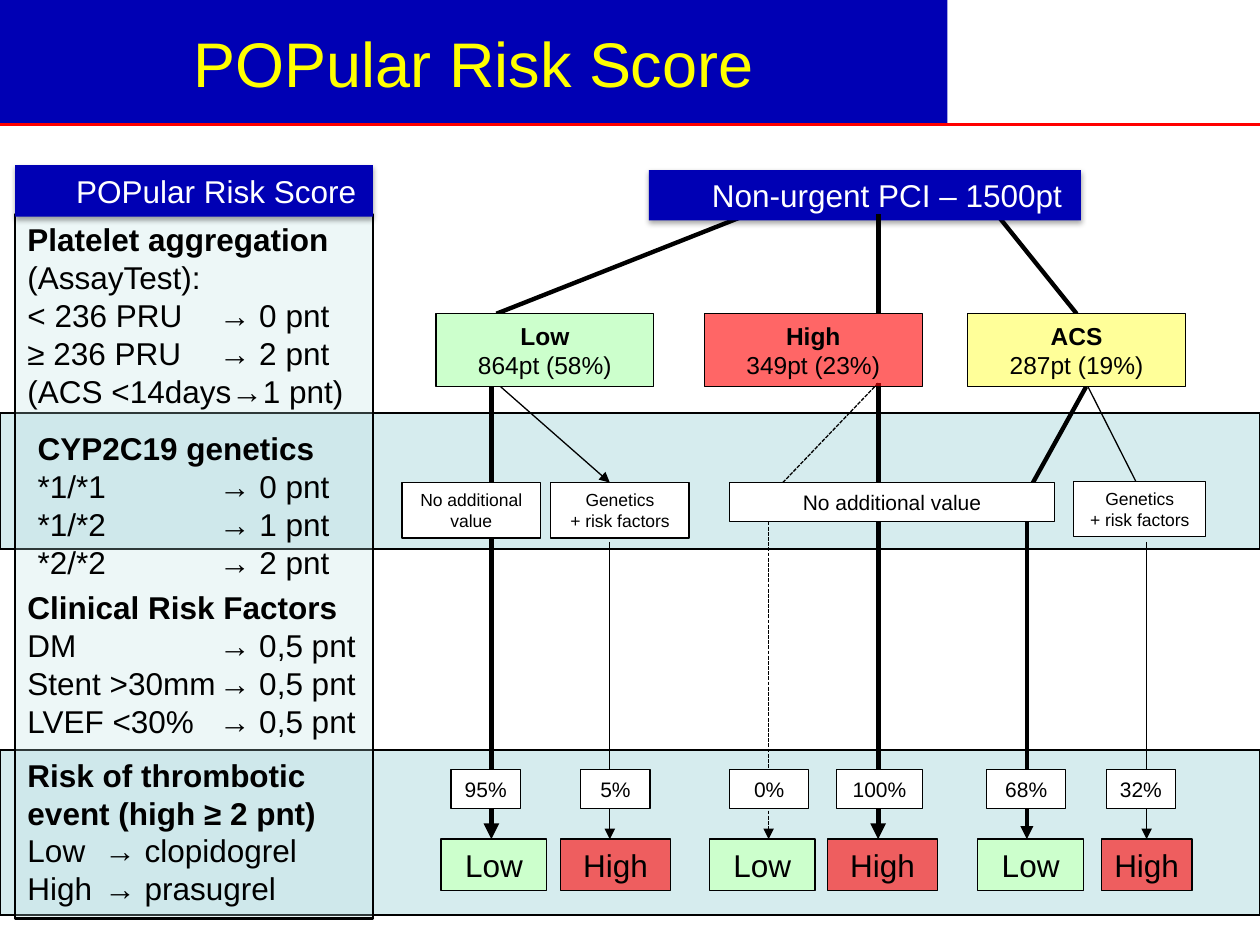
from dataclasses import dataclass

from lxml import etree
from pptx import Presentation
from pptx.dml.color import RGBColor
from pptx.enum.dml import MSO_LINE
from pptx.enum.shapes import MSO_CONNECTOR, MSO_SHAPE
from pptx.enum.text import MSO_ANCHOR, PP_ALIGN
from pptx.oxml.ns import qn
from pptx.util import Inches, Pt

RECTANGLE = MSO_SHAPE.RECTANGLE
STRAIGHT = MSO_CONNECTOR.STRAIGHT
DASH = MSO_LINE.SQUARE_DOT
LEFT, CENTER = PP_ALIGN.LEFT, PP_ALIGN.CENTER
TOP, MIDDLE = MSO_ANCHOR.TOP, MSO_ANCHOR.MIDDLE

BLUE = RGBColor(0x00, 0x00, 0xB4)
YELLOW = RGBColor(0xFF, 0xFF, 0x00)
RED = RGBColor(0xFF, 0x00, 0x00)
GREEN = RGBColor(0xCC, 0xFF, 0xCC)
PALE_YELLOW = RGBColor(0xFF, 0xFF, 0x99)
TEAL = RGBColor(0xBB, 0xE0, 0xE3)
WHITE = RGBColor(0xFF, 0xFF, 0xFF)
BLACK = RGBColor(0x00, 0x00, 0x00)

SLIDE_WIDTH, SLIDE_HEIGHT = Inches(10), Inches(7.5)
COLUMN, ROW = SLIDE_WIDTH / 100, SLIDE_HEIGHT / 75

GROUP_HEIGHT, SPLIT_ROW, TEST_ROW, TEST_HEIGHT = 5.8, 5.5, 13.4, 4.4
PERCENT_ROW, PERCENT_HEIGHT, OUTCOME_ROW, OUTCOME_HEIGHT = 36.2, 3.1, 41.7, 4.1


@dataclass
class Branch:
    left: float
    name: str
    count: str
    fill: RGBColor
    opacity: int
    lines: list
    tests: list
    percents: list
    outcomes: list


BRANCHES = [
    Branch(34.6, "Low", "864pt (58%)", GREEN, 100,
           [(4.4, SPLIT_ROW, 4.4, OUTCOME_ROW, 3), (4.8, SPLIT_ROW, 13.8, TEST_ROW, 0.75),
            (13.8, 18.1, 13.8, OUTCOME_ROW, 0.75)],
           [(-2.7, 13.4, 11, "No additional\nvalue"), (9.1, 13.4, 11, "Genetics\n+ risk factors")],
           [(1.2, 5.5, "95%"), (11.5, 5.5, "5%")], [(0.4, 8.4), (9.9, 8.7)]),
    Branch(55.9, "High", "349pt (23%)", RED, 60,
           [(13.8, SPLIT_ROW, 4.7, 15, 0.75, DASH), (5.1, 16.5, 5.1, OUTCOME_ROW, 0.75, DASH),
            (13.8, SPLIT_ROW, 13.8, OUTCOME_ROW, 3)],
           [], [(2, 6.3, "0%"), (10.5, 6.8, "100%")], [(0.4, 8.4), (9.8, 8.7)]),
    Branch(76.8, "ACS", "287pt (19%)", PALE_YELLOW, 100,
           [(9.4, 5.8, 4.3, 15, 2.5), (4.7, 15.7, 4.7, OUTCOME_ROW, 2.5),
            (9.4, SPLIT_ROW, 14.2, 15, 0.75), (14.2, 18.1, 14.2, OUTCOME_ROW, 0.75)],
           [(8.4, 13.3, 10.5, "Genetics\n+ risk factors")],
           [(1.5, 6.3, "68%"), (11, 5.5, "32%")], [(0.8, 8.4), (10.6, 7.2)]),
]

SCORE_SECTIONS = [
    (0, 3.9, 15.2, 1, ["Platelet aggregation", "(AssayTest):", "< 236 PRU\t→ 0 pnt",
                       "≥ 236 PRU\t→ 2 pnt", "(ACS <14days→1 pnt)"]),
    (0.8, 20.5, 14.4, 1, ["CYP2C19 genetics", "*1/*1\t→ 0 pnt", "*1/*2\t→ 1 pnt", "*2/*2\t→ 2 pnt"]),
    (0, 33.1, 15.2, 1, ["Clinical Risk Factors", "DM\t→ 0,5 pnt", "Stent >30mm\t→ 0,5 pnt",
                        "LVEF <30%\t→ 0,5 pnt"]),
    (0, 46.4, 6.1, 2, ["Risk of thrombotic", "event (high ≥ 2 pnt)", "Low\t→ clopidogrel",
                       "High\t→ prasugrel"]),
]


def grid_box(left, top, width, height):
    return [round(n) for n in (left * COLUMN, top * ROW, width * COLUMN, height * ROW)]


def set_opacity(shape, percent):
    color = shape.fill._xPr.find(qn("a:solidFill"))[0]
    etree.SubElement(color, qn("a:alpha"), val=str(percent * 1000))


def write_text(shape, lines, size, color=BLACK, bold_lines=0, alignment=CENTER, anchor=MIDDLE, tab=None):
    frame = shape.text_frame
    frame.word_wrap = True
    frame.vertical_anchor = anchor
    frame.text = "\n".join(lines)
    for index, paragraph in enumerate(frame.paragraphs):
        paragraph.alignment = alignment
        if tab:
            stops = etree.SubElement(paragraph._p.get_or_add_pPr(), qn("a:tabLst"))
            etree.SubElement(stops, qn("a:tab"), pos=str(round(tab * COLUMN)), algn="l")
        font = paragraph.font
        font.name, font.size, font.bold = "Arial", Pt(size), index < bold_lines
        font.color.rgb = color


def add_box(slide, box, fill, opacity=100, line_width=0.75):
    shape = slide.shapes.add_shape(RECTANGLE, *grid_box(*box))
    shape.shadow.inherit = False
    shape.fill.solid()
    shape.fill.fore_color.rgb = fill
    if opacity < 100:
        set_opacity(shape, opacity)
    if line_width:
        shape.line.color.rgb = BLACK
        shape.line.width = Pt(line_width)
    else:
        shape.line.fill.background()
    return shape


def add_line(slide, x1, y1, x2, y2, width, dash=None, color=BLACK, arrow=False):
    start, end = grid_box(x1, y1, 0, 0)[:2], grid_box(x2, y2, 0, 0)[:2]
    connector = slide.shapes.add_connector(STRAIGHT, *start, *end)
    connector.line.color.rgb = color
    connector.line.width = Pt(width)
    if dash:
        connector.line.dash_style = dash
    if arrow:
        etree.SubElement(connector.line._get_or_add_ln(), qn("a:tailEnd"), type="triangle")
    etree.SubElement(connector._element.spPr, qn("a:effectLst"))
    return connector


def draw_header(slide, box, text):
    shape = add_box(slide, box, BLUE, line_width=0)
    write_text(shape, [text], 18, WHITE)
    shape.text_frame.margin_left = round(4.5 * COLUMN)
    effects = shape._element.spPr.find(qn("a:effectLst"))
    shadow = etree.SubElement(effects, qn("a:outerShdw"), blurRad=str(Pt(3.1)),
                              dist=str(Pt(1.8)), dir="5400000", rotWithShape="0")
    color = etree.SubElement(shadow, qn("a:srgbClr"), val=str(BLACK))
    etree.SubElement(color, qn("a:alpha"), val="35000")


def draw_title(slide, box):
    left, top, width, height = box
    title = add_box(slide, (left, top, width * 0.752, height), BLUE, line_width=0)
    write_text(title, ["POPular Risk Score"], 36, YELLOW)
    add_line(slide, left, top + height, left + width, top + height, 2, color=RED)


def draw_score_panel(slide, box):
    left, top, width, height = box
    add_box(slide, (left, top + 3.9, width, height - 3.9), TEAL, 25, 1.5)
    for indent, offset, tab, bold_lines, lines in SCORE_SECTIONS:
        section = slide.shapes.add_textbox(*grid_box(left + indent, top + offset, width + 0.9 - indent, 13))
        write_text(section, lines, 18, bold_lines=bold_lines, alignment=LEFT, anchor=TOP, tab=tab)
    draw_header(slide, (left, top, width, 4.1), "POPular Risk Score")


def draw_branch(slide, box, branch):
    left, top, width, height = box
    for x1, y1, x2, y2, *style in branch.lines:
        last_line = add_line(slide, left + x1, top + y1, left + x2, top + y2, *style, arrow=True)
    group = add_box(slide, (left, top, width, GROUP_HEIGHT), branch.fill, branch.opacity)
    write_text(group, [branch.name, branch.count], 14, bold_lines=1)
    for x, y, test_width, text in branch.tests:
        test = add_box(slide, (left + x, top + y, test_width, TEST_HEIGHT), WHITE)
        write_text(test, text.split("\n"), 10)
    for x, percent_width, text in branch.percents:
        percent = add_box(slide, (left + x, top + PERCENT_ROW, percent_width, PERCENT_HEIGHT), WHITE)
        write_text(percent, [text], 12)
    levels = [("Low", GREEN, 100), ("High", RED, 60)]
    for (x, outcome_width), (text, fill, opacity) in zip(branch.outcomes, levels):
        outcome = add_box(slide, (left + x, top + height - OUTCOME_HEIGHT, outcome_width, OUTCOME_HEIGHT),
                          fill, opacity)
        write_text(outcome, [text], 18)
        outcome.text_frame.margin_left = outcome.text_frame.margin_right = round(0.5 * COLUMN)
    if branch.name == "ACS":
        last_line.end_connect(outcome, 0)
    return group


def draw_flow(slide, box):
    left, top, width, height = box
    branch_top, header_bottom = top + 11.4, top + 3.5
    low_line = add_line(slide, left + 27.5, header_bottom, left + 7.5, branch_top, 2.5)
    acs_line = add_line(slide, left + 47.2, header_bottom, left + 53.5, branch_top, 2.5)
    groups = [draw_branch(slide, (branch.left, branch_top, 17.3, height - 11.4), branch)
              for branch in BRANCHES]
    acs_line.end_connect(groups[-1], 0)
    shared_test = add_box(slide, (left + 26, branch_top + TEST_ROW, 25.8, 3.1), WHITE)
    write_text(shared_test, ["No additional value"], 12)
    draw_header(slide, (left + 19.6, top, 34.3, 4), "Non-urgent PCI – 1500pt")
    add_line(slide, left + 37.8, branch_top, left + 37.8, header_bottom, 3)


def main():
    presentation = Presentation()
    presentation.slide_width, presentation.slide_height = SLIDE_WIDTH, SLIDE_HEIGHT
    slide = presentation.slides.add_slide(presentation.slide_layouts[6])
    for band in ((0, 32.8, 100, 10.8), (0, 59.5, 100, 13.1)):
        add_box(slide, band, TEAL, 60, 1)
    draw_score_panel(slide, (1.2, 13.1, 28.4, 59.8))
    draw_flow(slide, (31.9, 13.5, 63.8, 57.2))
    draw_title(slide, (0, 0, 100, 9.9))
    presentation.save("out.pptx")


if __name__ == "__main__":
    main()
